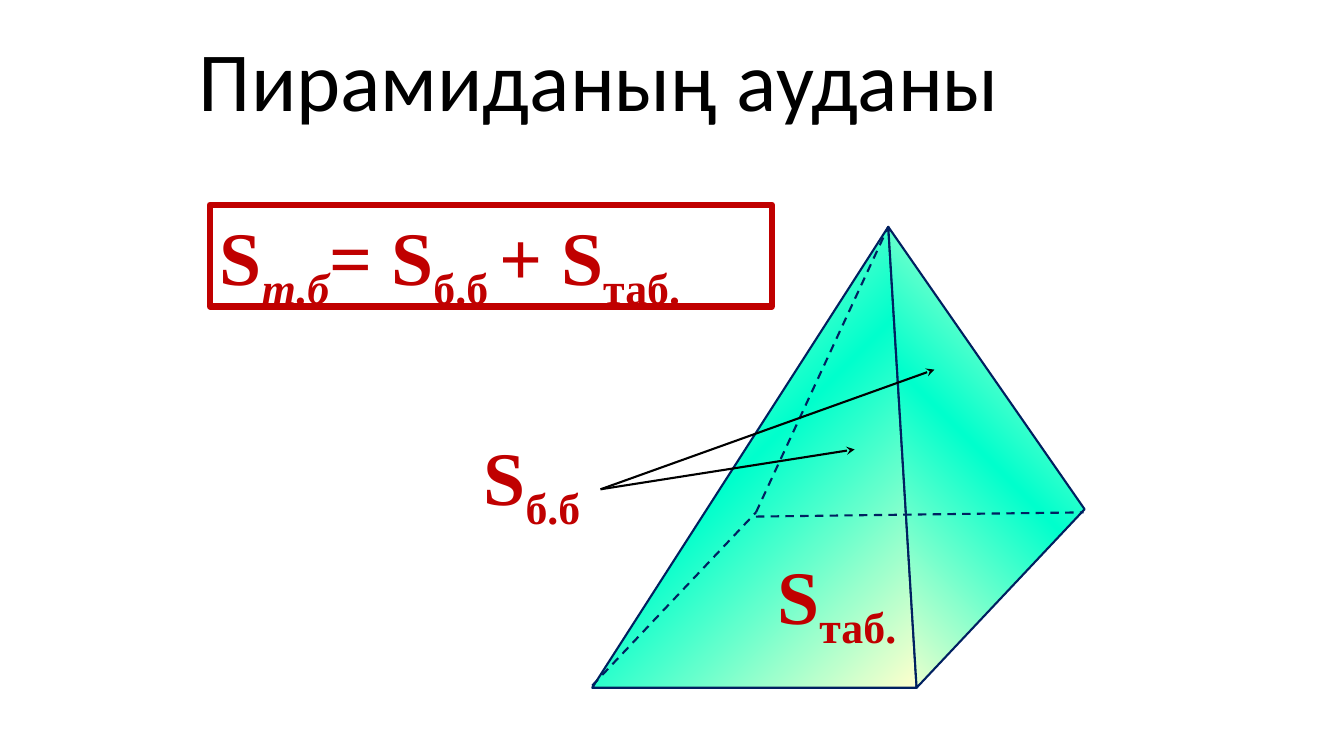
"""Build the slide on the surface area of a pyramid."""
from copy import deepcopy
from dataclasses import dataclass

from lxml import etree
from pptx import Presentation
from pptx.dml.color import RGBColor
from pptx.enum.dml import MSO_LINE
from pptx.enum.shapes import MSO_CONNECTOR, MSO_SHAPE
from pptx.enum.text import MSO_ANCHOR, PP_ALIGN
from pptx.oxml.ns import qn
from pptx.util import Pt

PX = 9525
BLANK_LAYOUT = 6
STRAIGHT = MSO_CONNECTOR.STRAIGHT
RECTANGLE = MSO_SHAPE.RECTANGLE
DASH = MSO_LINE.DASH
LEFT = PP_ALIGN.LEFT
TOP = MSO_ANCHOR.TOP
MIDDLE = MSO_ANCHOR.MIDDLE


@dataclass(frozen=True)
class Theme:
    """Colours, fonts and sizes in points."""
    title_font: str = "Calibri"
    formula_font: str = "Times New Roman"
    title_size: int = 60
    formula_size: int = 54
    thin: float = 1.5
    thick: float = 4.5
    ink: RGBColor = RGBColor(0, 0, 0)
    red: RGBColor = RGBColor(0xC0, 0, 0)
    edge: RGBColor = RGBColor(0, 0x20, 0x60)
    cream: RGBColor = RGBColor(0xFF, 0xFF, 0xCC)
    teal: RGBColor = RGBColor(0, 0xFF, 0xCC)


@dataclass(frozen=True)
class Box:
    """A region in px."""
    left: int
    top: int
    width: int
    height: int

    def emu(self):
        """Return left, top, width and height in EMU."""
        return [value * PX for value in (self.left, self.top, self.width, self.height)]

    def point(self, position):
        """Return a position inside the box as slide EMU."""
        return (self.left + position[0]) * PX, (self.top + position[1]) * PX


THEME = Theme()


def set_line(line, color, width):
    """Colour a line and set its width."""
    line.color.rgb = color
    line.width = Pt(width)


def add_segment(group, box, start, end, color):
    """Draw a straight line between two positions in the box."""
    segment = group.shapes.add_connector(STRAIGHT, *box.point(start), *box.point(end))
    set_line(segment.line, color, THEME.thin)
    etree.SubElement(segment._element.spPr, qn("a:effectLst"))
    return segment


def add_face(group, box, corners, angle):
    """Draw a pyramid face with a cream, teal, cream gradient."""
    first, *others = [box.point(corner) for corner in corners]
    builder = group.shapes.build_freeform(*first)
    builder.add_line_segments(others, close=True)
    face = builder.convert_to_shape()
    face.shadow.inherit = False
    set_line(face.line, THEME.edge, THEME.thin)
    face.fill.gradient()
    face.fill.gradient_angle = angle
    stops = face._element.spPr.find(".//" + qn("a:gsLst"))
    stops.append(deepcopy(stops[-1]))
    colors = (THEME.cream, THEME.teal, THEME.cream)
    for index, (stop, color) in enumerate(zip(face.fill.gradient_stops, colors)):
        stop.position = index / 2
        stop.color.rgb = color


def add_pyramid(page, box):
    """Draw the two front faces and the hidden edges."""
    group = page.shapes.add_group_shape()
    apex, left, front = (282, 0), (0, 439), (309, 439)
    right, back = (469, 269), (156, 272)
    add_face(group, box, (left, front, apex), 315)
    add_face(group, box, (front, apex, right), 45)
    hidden_edges = ((back, apex), ((0, 437), back), ((156, 276), (468, 272)))
    for start, end in hidden_edges:
        add_segment(group, box, start, end, THEME.edge).line.dash_style = DASH


def add_arrows(page, box):
    """Point from the side label to the two side faces."""
    group = page.shapes.add_group_shape()
    for target in ((242, 76), (box.width, 0)):
        arrow = add_segment(group, box, (0, box.height), target, THEME.ink)
        etree.SubElement(arrow.line._get_or_add_ln(), qn("a:tailEnd"), type="stealth")


def style_span(span, font, size, color, bold=False):
    """Set the font of a run."""
    span.font.name = font
    span.font.size = Pt(size)
    span.font.color.rgb = color
    span.font.bold = bold


def add_title(page, box, text):
    """Write the slide title."""
    frame = page.shapes.add_textbox(*box.emu()).text_frame
    frame.word_wrap = True
    frame.vertical_anchor = MIDDLE
    para = frame.paragraphs[0]
    para.text = text
    para.line_spacing = 0.9
    style_span(para.runs[0], THEME.title_font, THEME.title_size, THEME.ink)


def add_formula(page, box, terms, framed=False):
    """Write pairs of symbol and subscript, in a frame if asked."""
    shape = page.shapes.add_shape(RECTANGLE, *box.emu()) if framed else page.shapes.add_textbox(*box.emu())
    if framed:
        shape.shadow.inherit = False
        shape.fill.background()
        set_line(shape.line, THEME.red, THEME.thick)
    frame = shape.text_frame
    frame.word_wrap = True
    frame.vertical_anchor = TOP
    para = frame.paragraphs[0]
    para.alignment = LEFT
    for symbol, subscript in terms:
        for text in (symbol, subscript):
            span = para.add_run()
            span.text = text
            style_span(span, THEME.formula_font, THEME.formula_size, THEME.red, bold=True)
        span.font._element.set("baseline", "-25000")
        span.font.italic = subscript == "т.б"


def build_slide(deck):
    """Place every region on a blank page."""
    page = deck.slides.add_slide(deck.slide_layouts[BLANK_LAYOUT])
    add_pyramid(page, Box(564, 216, 469, 439))
    add_title(page, Box(180, 28, 864, 105), "Пирамиданың ауданы")
    total = (("S", "т.б"), ("= S", "б.б "), ("+ S", "таб."))
    add_formula(page, Box(200, 195, 535, 97), total, framed=True)
    add_formula(page, Box(451, 405, 120, 97), (("S", "б.б"),))
    add_formula(page, Box(731, 518, 145, 97), (("S", "таб."),))
    add_arrows(page, Box(572, 352, 318, 114))


def main():
    """Create and save the deck."""
    deck = Presentation()
    deck.slide_width = 1280 * PX
    deck.slide_height = 720 * PX
    build_slide(deck)
    deck.save("out.pptx")


if __name__ == "__main__":
    main()
